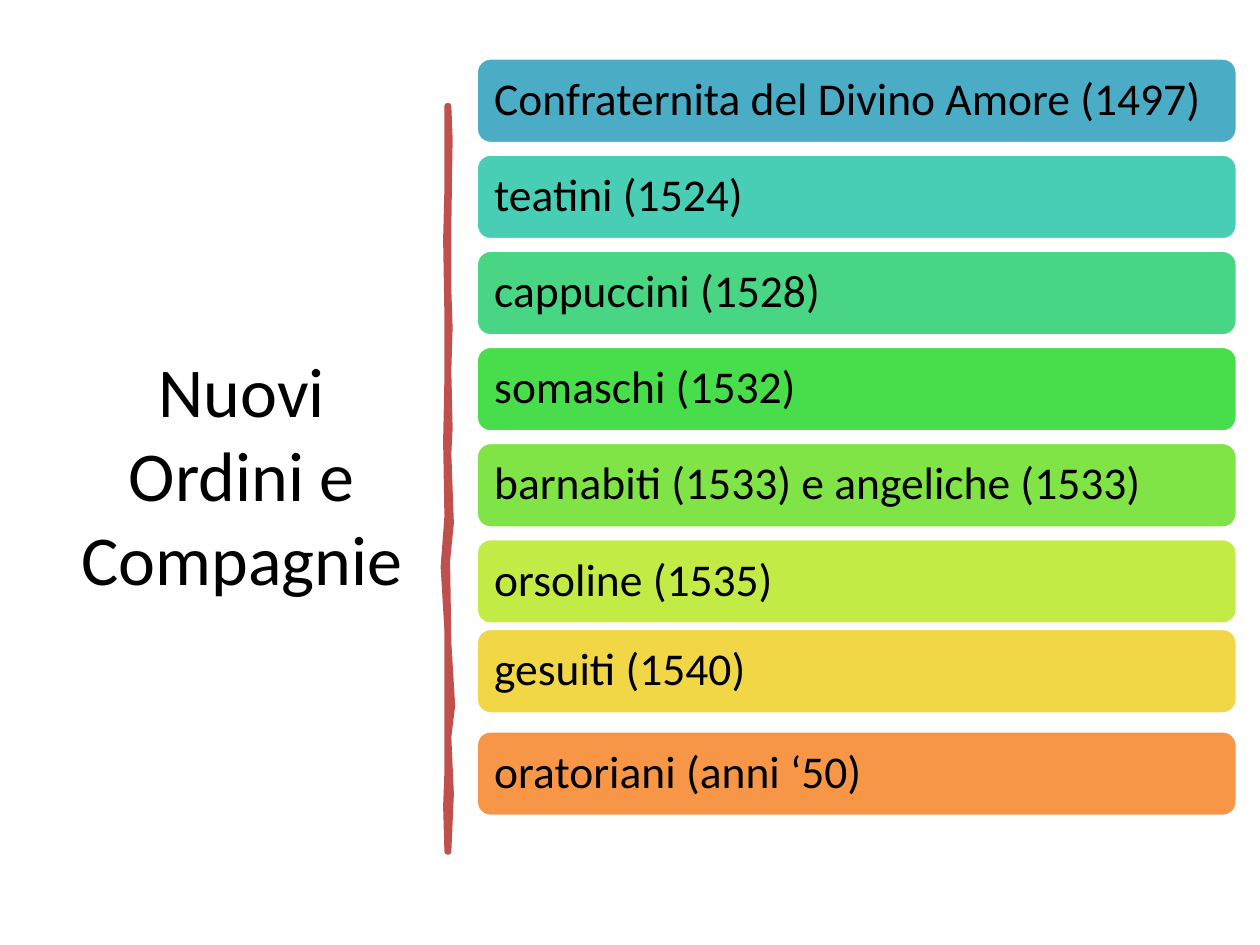
from lxml import etree
from pptx import Presentation
from pptx.dml.color import RGBColor
from pptx.enum.shapes import MSO_SHAPE as Shape
from pptx.enum.text import MSO_ANCHOR as Anchor, PP_ALIGN as Align
from pptx.oxml.ns import qn
from pptx.util import Inches, Pt

FONT = "Calibri"
COLORS = {"text": "000000", "border": "FFFFFF", "divider": "C0504D"}

# Label, fill, vertical nudge from the even grid
ORDERS = [
    ("Confraternita del Divino Amore (1497)", "4BACC6", 0),
    ("teatini (1524)", "49CEB6", 0),
    ("cappuccini (1528)", "48D684", 0),
    ("somaschi (1532)", "47DD4B", 0),
    ("barnabiti (1533) e angeliche (1533)", "80E446", 0),
    ("orsoline (1535)", "C3EB46", 0),
    ("gesuiti (1540)", "F1D746", -0.05),
    ("oratoriani (anni ‘50)", "F79646", 0),
]

# Hand-drawn edges: (horizontal offset from the axis, height)
RIGHT_EDGE = [(0.01, 0.84), (0.02, 1.1), (0.01, 1.8), (0.01, 2.3), (0.02, 2.6),
              (0.01, 2.94), (0.02, 3.4), (0.01, 3.6), (0.03, 4.15), (0, 4.45),
              (0.01, 5.1), (0.04, 5.6), (0.01, 5.85), (0.03, 6.3), (0.01, 6.76)]
LEFT_EDGE = [(0, 6.76), (-0.01, 6.4), (0, 6.13), (0, 5.3), (0, 5), (-0.03, 4.5),
             (0, 4.1), (-0.01, 3.5), (0, 3), (0, 2.5), (-0.01, 1.9), (0, 1.5),
             (0, 0.84)]


def rgb(value):
    return RGBColor.from_string(value)


def set_text(shape, text, size, align):
    frame = shape.text_frame
    frame.word_wrap = True
    frame.vertical_anchor = Anchor.MIDDLE
    frame.text = text
    paragraph = frame.paragraphs[0]
    paragraph.alignment = align
    font = paragraph.runs[0].font
    font.name, font.size = FONT, Pt(size)
    font.color.rgb = rgb(COLORS["text"])
    return paragraph


def paint(shape, fill, line, width):
    shape.shadow.inherit = False
    shape.fill.solid()
    shape.fill.fore_color.rgb = rgb(fill)
    shape.line.color.rgb = rgb(line)
    shape.line.width = Pt(width)


def add_title(slide, left, top, width, height):
    box = slide.shapes.add_textbox(Inches(left), Inches(top), Inches(width), Inches(height))
    set_text(box, "Nuovi Ordini e Compagnie", 40, Align.CENTER)


def add_divider(slide, axis):
    points = [(Inches(axis + x), Inches(y)) for x, y in RIGHT_EDGE + LEFT_EDGE]
    builder = slide.shapes.build_freeform(*points[0])
    builder.add_line_segments(points[1:], close=True)
    divider = builder.convert_to_shape()
    paint(divider, COLORS["divider"], COLORS["divider"], 3.25)
    # Round joins soften the outline
    etree.SubElement(divider.line._get_or_add_ln(), qn("a:round"))


def add_orders(slide, left, top, width, height, bar_height=0.68):
    pitch = (height - bar_height) / (len(ORDERS) - 1)
    for index, (label, fill, nudge) in enumerate(ORDERS):
        bar = slide.shapes.add_shape(
            Shape.ROUNDED_RECTANGLE, Inches(left), Inches(top + index * pitch + nudge),
            Inches(width), Inches(bar_height))
        paint(bar, fill, COLORS["border"], 2)
        paragraph = set_text(bar, label, 26, Align.LEFT)
        paragraph.line_spacing = 0.9
        frame = bar.text_frame
        frame.margin_left = frame.margin_right = Inches(0.11)
        frame.margin_top = frame.margin_bottom = Inches(0.11)


def main():
    presentation = Presentation()
    presentation.slide_width, presentation.slide_height = Inches(10), Inches(7.5)
    slide = presentation.slides.add_slide(presentation.slide_layouts[6])
    add_title(slide, 0.52, 0.7, 2.8, 6.11)
    add_divider(slide, 3.55)
    add_orders(slide, 3.78, 0.46, 6.04, 6.02)
    presentation.save("out.pptx")


if __name__ == "__main__":
    main()
